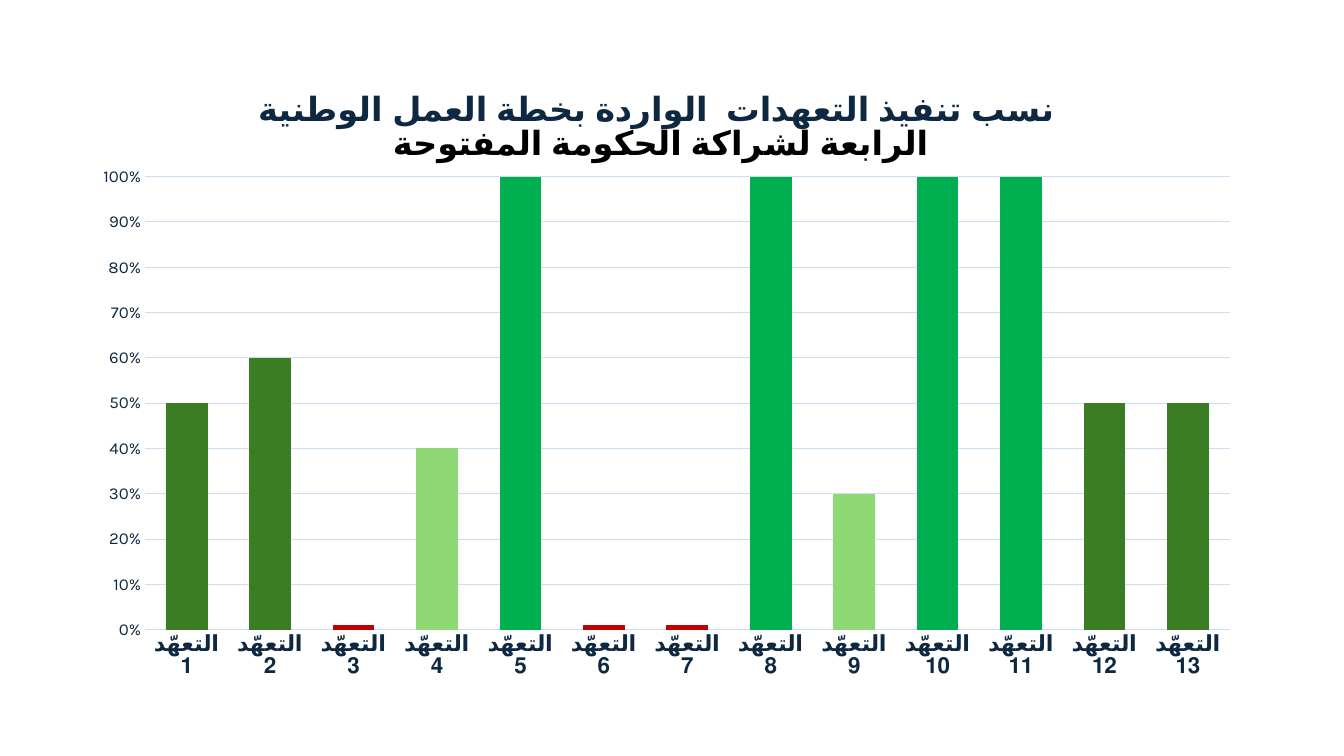
from lxml import etree
from pptx import Presentation
from pptx import util as u
from pptx.chart import data
from pptx.dml.color import RGBColor
from pptx.enum import chart as ch
from pptx.oxml import ns

FONT = "Karla"
NAVY, BLACK, GRID = "0E2841", "000000", "CADFF4"
TITLE_LINES = [
    ("نسب تنفيذ التعهدات  الواردة بخطة العمل الوطنية ", NAVY),
    ("الرابعة لشراكة الحكومة المفتوحة", BLACK),
]
COMMITMENT = "التعهّد"
PROGRESS = [0.5, 0.6, 0.01, 0.4, 1, 0.01, 0.01, 1, 0.3, 1, 1, 0.5, 0.5]
# Lowest progress for each colour, highest first
LEVELS = [(1, "00B050"), (0.5, "3B7D23"), (0.3, "8ED973"), (0, "C00000")]
CHART_BOX = (0.74, 0.72, 11.63, 6)
PLOT_BOX = {"x": 0.06, "y": 0.174, "w": 0.925, "h": 0.757}


def rgb(value):
    return RGBColor.from_string(value)


def style(font, size, color, bold=False):
    font.name, font.size, font.bold = FONT, u.Pt(size), bold
    font.color.rgb = rgb(color)


def add_text(paragraph, wording, **looks):
    run = paragraph.add_run()
    run.text = wording
    style(run.font, **looks)


def rule(line):
    line.color.rgb = rgb(GRID)
    line.width = u.Pt(0.75)


def place_plot(chart, box):
    """Fix the inner plot area, in fractions of the chart."""
    plot_area = chart._chartSpace.chart.plotArea
    for old in plot_area.findall(ns.qn("c:layout")):
        plot_area.remove(old)
    layout = etree.Element(ns.qn("c:layout"))
    manual = etree.SubElement(layout, ns.qn("c:manualLayout"))
    settings = {"layoutTarget": "inner", "xMode": "edge", "yMode": "edge", **box}
    for tag, value in settings.items():
        etree.SubElement(manual, ns.qn(f"c:{tag}")).set("val", str(value))
    plot_area.insert(0, layout)


def main():
    deck = Presentation()
    deck.slide_width, deck.slide_height = u.Inches(13.33), u.Inches(7.5)
    slide = deck.slides.add_slide(deck.slide_layouts[6])

    commitments = data.CategoryChartData(number_format="0%")
    commitments.categories = [f"{COMMITMENT} {n}" for n in range(1, len(PROGRESS) + 1)]
    commitments.add_series("Series 1", PROGRESS)
    chart = slide.shapes.add_chart(
        ch.XL_CHART_TYPE.COLUMN_CLUSTERED, *map(u.Inches, CHART_BOX), commitments
    ).chart
    style(chart.font, 10, BLACK)
    chart.has_legend = False
    place_plot(chart, PLOT_BOX)

    heading = chart.chart_title.text_frame
    for i, (line, color) in enumerate(TITLE_LINES):
        paragraph = heading.add_paragraph() if i else heading.paragraphs[0]
        add_text(paragraph, line, size=24, color=color, bold=True)
    chart.chart_title.include_in_layout = False

    names, percent = chart.category_axis, chart.value_axis
    for axis in (names, percent):
        axis.major_tick_mark = axis.minor_tick_mark = ch.XL_TICK_MARK.NONE
    style(names.tick_labels.font, 16, NAVY, bold=True)
    rule(names.format.line)
    style(percent.tick_labels.font, 12, NAVY)
    percent.tick_labels.number_format = "0%"
    percent.tick_labels.number_format_is_linked = False
    percent.minimum_scale, percent.maximum_scale, percent.major_unit = 0, 1, 0.1
    percent.format.line.fill.background()
    rule(percent.major_gridlines.format.line)

    bars = chart.plots[0]
    bars.gap_width, bars.overlap, bars.vary_by_categories = 100, -24, False
    for i, share in enumerate(PROGRESS):
        fill = bars.series[0].points[i].format.fill
        fill.solid()
        fill.fore_color.rgb = rgb(next(c for least, c in LEVELS if share >= least))

    deck.save("out.pptx")


if __name__ == "__main__":
    main()
